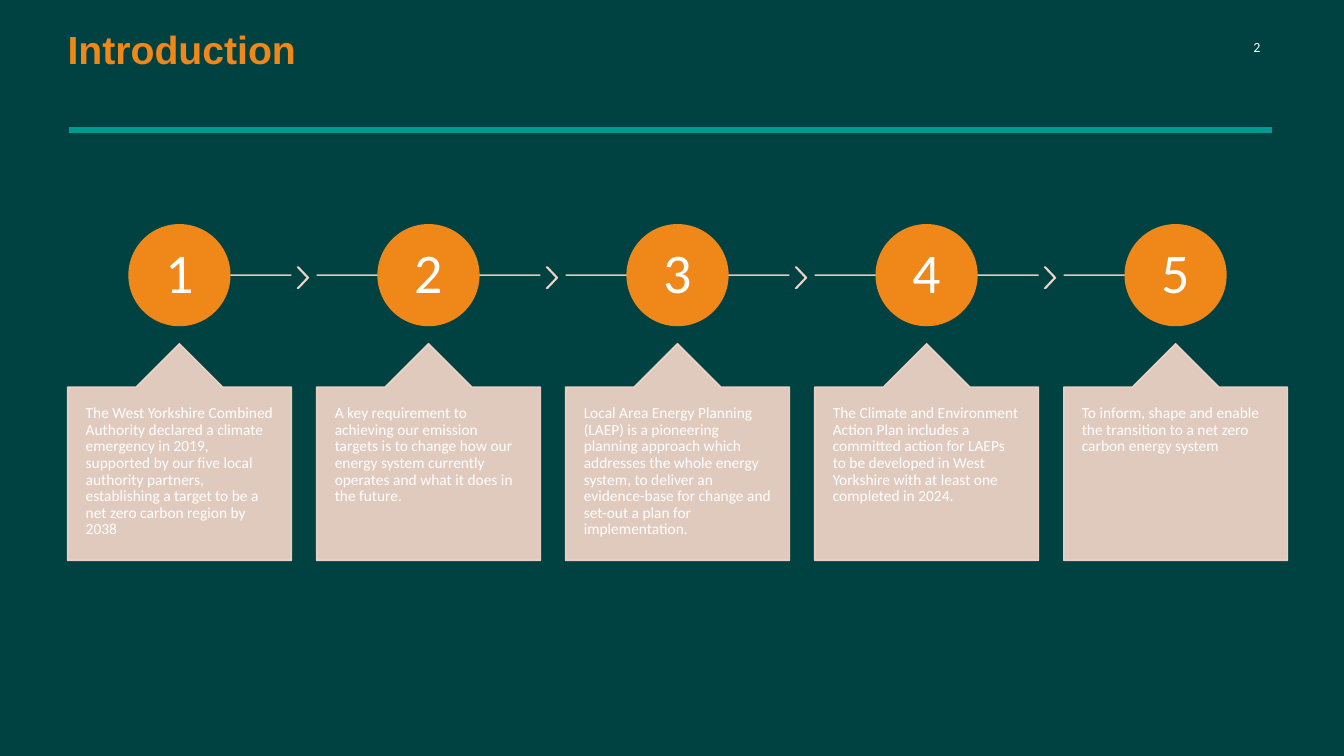
from lxml import etree
from pptx import Presentation
from pptx.dml.color import RGBColor
from pptx.enum.shapes import MSO_CONNECTOR, MSO_SHAPE
from pptx.enum.text import MSO_ANCHOR, PP_ALIGN
from pptx.oxml.ns import qn
from pptx.util import Inches, Pt

STRAIGHT = MSO_CONNECTOR.STRAIGHT
CHEVRON, CIRCLE, CALLOUT = MSO_SHAPE.CHEVRON, MSO_SHAPE.OVAL, MSO_SHAPE.UP_ARROW_CALLOUT
TOP, MIDDLE = MSO_ANCHOR.TOP, MSO_ANCHOR.MIDDLE
LEFT, CENTER, RIGHT = PP_ALIGN.LEFT, PP_ALIGN.CENTER, PP_ALIGN.RIGHT

# Content
TITLE = "Introduction"
PAGE_NUMBER = "2"
STEPS = [
    "The West Yorkshire Combined Authority declared a climate emergency in 2019, "
    "supported by our five local authority partners, establishing a target to be "
    "a net zero carbon region by 2038",
    "A key requirement to achieving our emission targets is to change how our "
    "energy system currently operates and what it does in the future.",
    "Local Area Energy Planning (LAEP) is a pioneering planning approach which "
    "addresses the whole energy system, to deliver an evidence-base for change "
    "and set-out a plan for implementation.",
    "The Climate and Environment Action Plan includes a committed action for "
    "LAEPs to be developed in West Yorkshire with at least one completed in 2024.",
    "To inform, shape and enable the transition to a net zero carbon energy system",
]

# Colours
DARK_GREEN, TEAL, ORANGE, PEACH, WHITE = "004141", "009A91", "F08719", "F9D9CC", "FFFFFF"
PEACH_OPACITY = 90

# Layout, in inches
STEP_LEFT, STEP_PITCH, STEP_WIDTH = 0.67, 2.47, 2.22
TIMELINE_Y = 2.73
CIRCLE_SIZE = 1
CHEVRON_GAP, CHEVRON_WIDTH, CHEVRON_HEIGHT = 0.06, 0.11, 0.21
CHEVRON_TOP = 2.65
CALLOUT_TOP, CALLOUT_HEIGHT = 3.41, 2.15


def rgb(color):
    return RGBColor.from_string(color)


def paint(color_format, color, opacity=100):
    """Apply a solid fill, with transparency where opacity is below 100."""
    color_format.solid()
    color_format.fore_color.rgb = rgb(color)
    if opacity < 100:
        for value in color_format._xPr.iter(qn("a:srgbClr")):
            etree.SubElement(value, qn("a:alpha")).set("val", str(opacity * 1000))


def write(frame, text, size, color=WHITE, font="Calibri", bold=False,
          align=LEFT, anchor=TOP, inset=0, spacing=0.9):
    frame.word_wrap = True
    frame.vertical_anchor = anchor
    frame.margin_left = frame.margin_right = Inches(inset)
    frame.margin_top = frame.margin_bottom = Inches(inset)
    frame.text = text
    paragraph = frame.paragraphs[0]
    paragraph.alignment = align
    paragraph.line_spacing = spacing
    paragraph.font.name = font
    paragraph.font.size = Pt(size)
    paragraph.font.bold = bold
    paragraph.font.color.rgb = rgb(color)


def add_line(x1, x2, y, color, width, opacity=100):
    line = slide.shapes.add_connector(STRAIGHT, Inches(x1), Inches(y), Inches(x2), Inches(y))
    paint(line.line.fill, color, opacity)
    line.line.width = Pt(width)
    etree.SubElement(line._element.spPr, qn("a:effectLst"))


def add_part(kind, x, y, width, height, color, opacity=100, adjustments=()):
    part = slide.shapes.add_shape(kind, Inches(x), Inches(y), Inches(width), Inches(height))
    part.shadow.inherit = False
    paint(part.fill, color, opacity)
    paint(part.line.fill, color, opacity)
    part.line.width = Pt(1)
    for index, value in enumerate(adjustments):
        part.adjustments[index] = value
    return part


prs = Presentation()
prs.slide_width, prs.slide_height = Inches(13.33), Inches(7.5)
slide = prs.slides.add_slide(prs.slide_layouts[5])
paint(slide.background.fill, DARK_GREEN)

# Header: title, page number and rule
title = slide.shapes.title
title.left, title.top, title.width, title.height = map(Inches, (0.67, 0.3, 12, 0.81))
write(title.text_frame, TITLE, 28, ORANGE, "Arial", bold=True)
page_number = slide.shapes.add_textbox(Inches(9.68), Inches(0.38), Inches(2.82), Inches(0.17))
write(page_number.text_frame, PAGE_NUMBER, 10, align=RIGHT, spacing=1)
add_line(0.68, 12.62, 1.29, TEAL, 4.5)

# Timeline: one numbered circle and callout per step
for number, text in enumerate(STEPS, start=1):
    left = STEP_LEFT + (number - 1) * STEP_PITCH
    right = left + STEP_WIDTH
    center = left + STEP_WIDTH / 2
    is_first, is_last = number == 1, number == len(STEPS)

    add_line(center if is_first else left, center if is_last else right,
             TIMELINE_Y, PEACH, 1, PEACH_OPACITY)
    if not is_last:
        add_part(CHEVRON, right + CHEVRON_GAP, CHEVRON_TOP, CHEVRON_WIDTH, CHEVRON_HEIGHT,
                 PEACH, PEACH_OPACITY, [0.9])

    circle = add_part(CIRCLE, center - CIRCLE_SIZE / 2, TIMELINE_Y - CIRCLE_SIZE / 2,
                      CIRCLE_SIZE, CIRCLE_SIZE, ORANGE)
    write(circle.text_frame, str(number), 40, align=CENTER, anchor=MIDDLE, inset=0.04)

    callout = add_part(CALLOUT, left, CALLOUT_TOP, STEP_WIDTH, CALLOUT_HEIGHT,
                       PEACH, PEACH_OPACITY, [0.4, 0.2, 0.2, 0.8])
    write(callout.text_frame, text, 11, inset=0.18)

prs.save("out.pptx")
